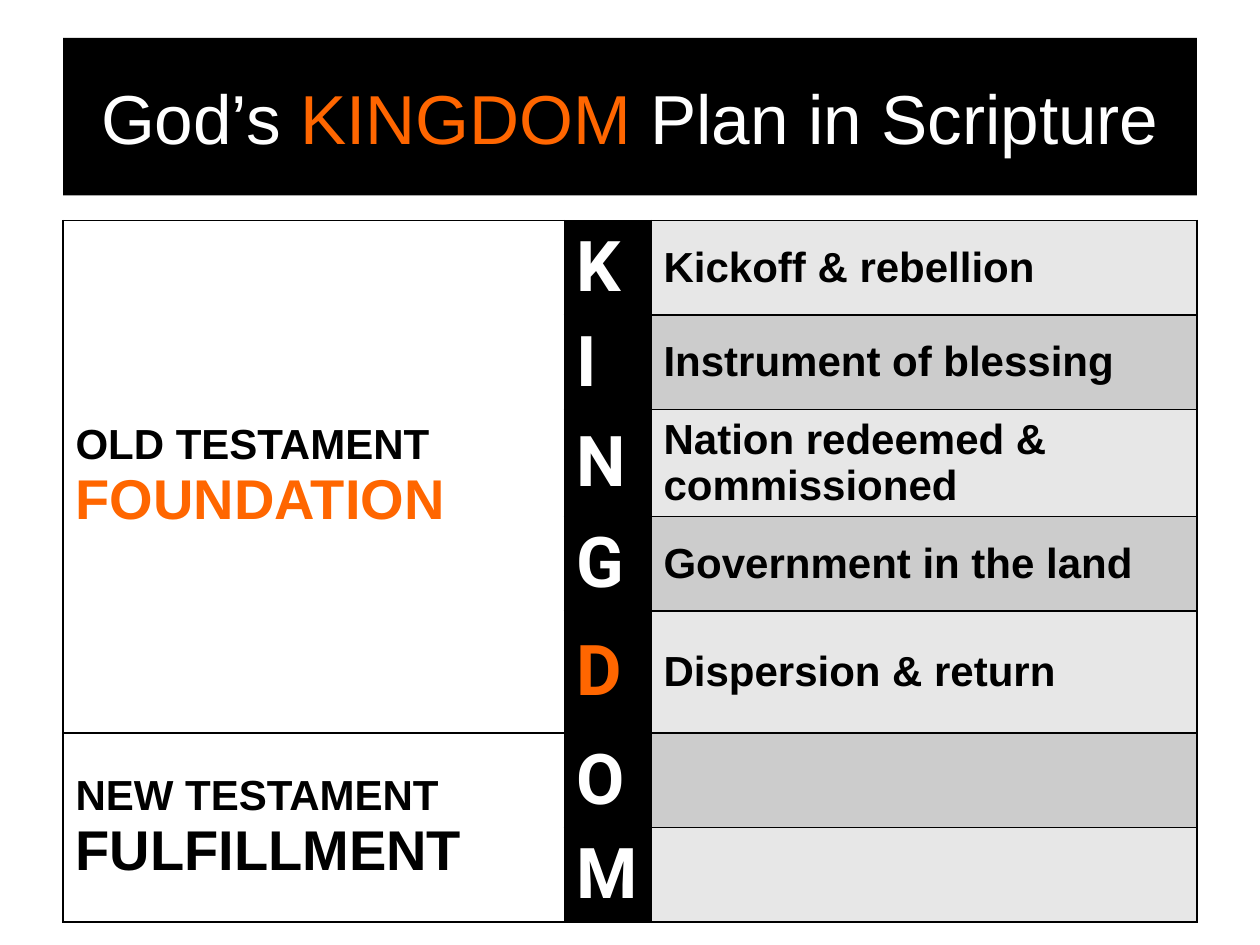
from dataclasses import dataclass

from lxml.etree import SubElement
from pptx import Presentation
from pptx.dml.color import RGBColor
from pptx.enum.text import MSO_ANCHOR, MSO_AUTO_SIZE, PP_ALIGN
from pptx.oxml.ns import qn
from pptx.util import Pt


@dataclass(frozen=True)
class Theme:
    black: str = "000000"
    white: str = "FFFFFF"
    accent: str = "FF6600"
    bands: tuple = ("E7E7E7", "CCCCCC")
    text_font: str = "Arial"
    letter_font: str = "Roboto"
    title_size: float = 39.6
    body_size: float = 24
    emphasis_size: float = 32
    letter_size: float = 40
    border: float = 1


THEME = Theme()

# Letter, its color, and the stage it stands for
STAGES = [
    ("K", THEME.white, "Kickoff & rebellion"),
    ("I", THEME.white, "Instrument of blessing"),
    ("N", THEME.white, "Nation redeemed & commissioned"),
    ("G", THEME.white, "Government in the land"),
    ("D", THEME.accent, "Dispersion & return"),
    ("O", THEME.white, ""),
    ("M", THEME.white, ""),
]
# First row, last row, testament, theme word, color of the theme word
TESTAMENTS = [
    (0, 4, "OLD TESTAMENT ", "FOUNDATION", THEME.accent),
    (5, 6, "NEW TESTAMENT ", "FULFILLMENT", THEME.black),
]
COLUMN_WIDTHS = [286.5, 49.5, 312]
ROW_HEIGHTS = [54, 54, 61, 54, 69.5, 54, 54]


def add_text(paragraph, text, *, size, color, font=THEME.text_font, bold=False):
    run = paragraph.add_run()
    run.text = text
    run.font.name = font
    run.font.size = Pt(size)
    run.font.bold = bold
    run.font.color.rgb = RGBColor.from_string(color)


def fill_solid(item, color):
    item.fill.solid()
    item.fill.fore_color.rgb = RGBColor.from_string(color)


class SlideBuilder:
    def __init__(self, slide, theme):
        self.slide = slide
        self.theme = theme

    def title(self, parts, left, top, width, height):
        shape = self.slide.shapes.title
        shape.left, shape.top = Pt(left), Pt(top)
        shape.width, shape.height = Pt(width), Pt(height)
        fill_solid(shape, self.theme.black)
        frame = shape.text_frame
        frame.word_wrap = True
        frame.auto_size = MSO_AUTO_SIZE.NONE
        frame.vertical_anchor = MSO_ANCHOR.MIDDLE
        paragraph = frame.paragraphs[0]
        paragraph.alignment = PP_ALIGN.CENTER
        for text, color in parts:
            add_text(paragraph, text, size=self.theme.title_size, color=color)

    def table(self, left, top, widths, heights):
        table = self.slide.shapes.add_table(
            len(heights), len(widths), Pt(left), Pt(top),
            Pt(sum(widths)), Pt(sum(heights))).table
        for column, width in zip(table.columns, widths):
            column.width = Pt(width)
        for row, height in zip(table.rows, heights):
            row.height = Pt(height)
        return table

    def cell(self, cell, fill):
        """Draw borders and fill, and return the cell's paragraph."""
        cell.vertical_anchor = MSO_ANCHOR.MIDDLE
        properties = cell._tc.get_or_add_tcPr()
        for side in ("a:lnL", "a:lnR", "a:lnT", "a:lnB"):
            line = SubElement(properties, qn(side), w=str(Pt(self.theme.border)))
            solid = SubElement(line, qn("a:solidFill"))
            SubElement(solid, qn("a:srgbClr"), val=self.theme.black)
        fill_solid(cell, fill)
        return cell.text_frame.paragraphs[0]


def main():
    presentation = Presentation()
    presentation.slide_width, presentation.slide_height = Pt(720), Pt(540)
    slide = presentation.slides.add_slide(presentation.slide_layouts[5])
    builder = SlideBuilder(slide, THEME)

    # Title bar
    builder.title([("God’s ", THEME.white), ("KINGDOM ", THEME.accent),
                   ("Plan in Scripture", THEME.white)], 36, 21.6, 648, 90)

    # Acrostic: one row per letter
    table = builder.table(36, 126, COLUMN_WIDTHS, ROW_HEIGHTS)
    for row, (letter, color, stage) in enumerate(STAGES):
        builder.cell(table.cell(row, 0), THEME.white)
        paragraph = builder.cell(table.cell(row, 1), THEME.black)
        add_text(paragraph, letter, size=THEME.letter_size, color=color,
                 font=THEME.letter_font, bold=True)
        paragraph = builder.cell(table.cell(row, 2), THEME.bands[row % 2])
        if stage:
            add_text(paragraph, stage, size=THEME.body_size,
                     color=THEME.black, bold=True)

    # Testaments: merged cells in the first column
    for first, last, testament, word, color in TESTAMENTS:
        cell = table.cell(first, 0)
        cell.merge(table.cell(last, 0))
        paragraph = cell.text_frame.paragraphs[0]
        add_text(paragraph, testament, size=THEME.body_size,
                 color=THEME.black, bold=True)
        add_text(paragraph, word, size=THEME.emphasis_size,
                 color=color, bold=True)

    presentation.save("out.pptx")


if __name__ == "__main__":
    main()
